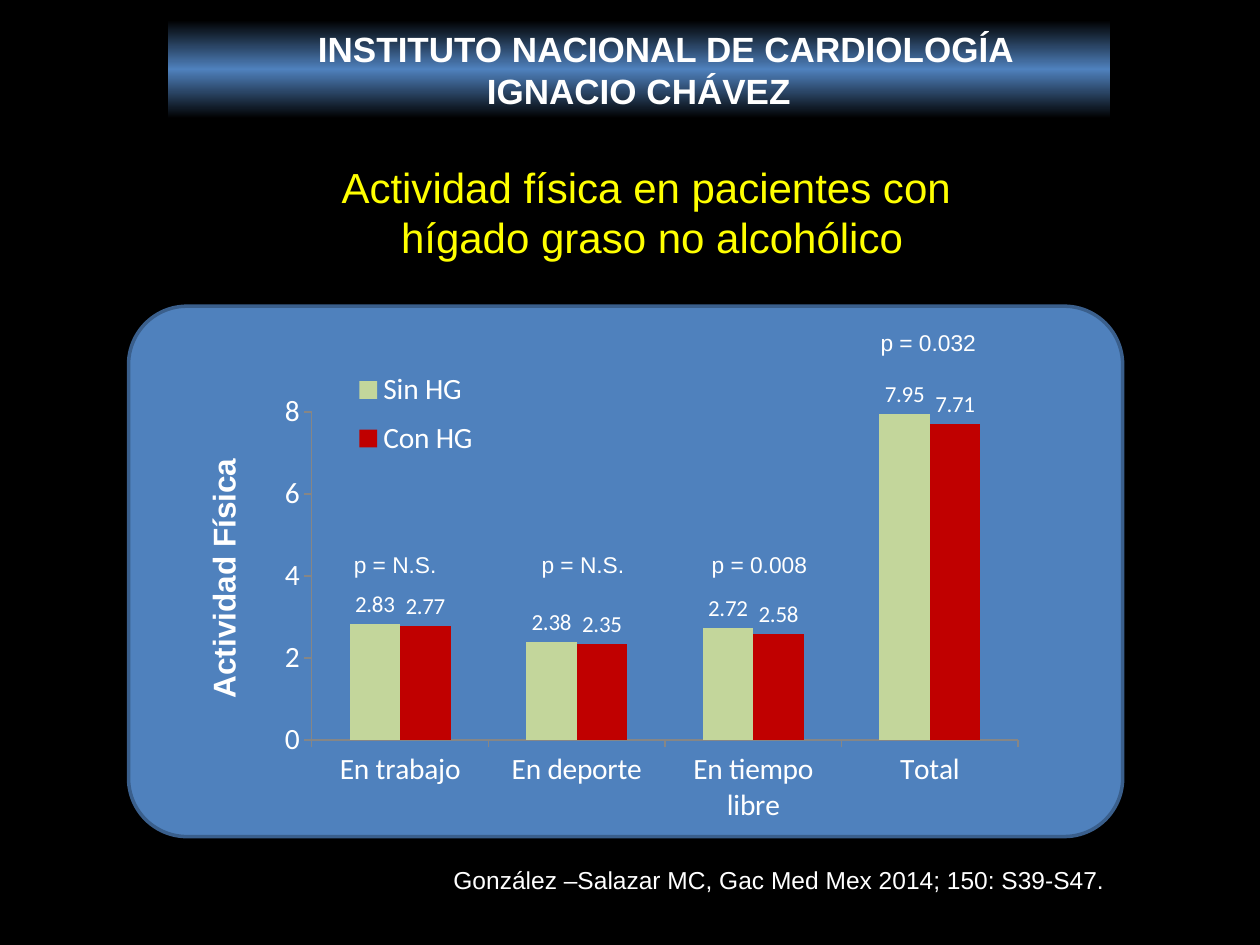
from copy import deepcopy
from lxml import etree
from pptx import Presentation
from pptx.chart.data import CategoryChartData as Data
from pptx.dml.color import RGBColor as RGB
from pptx.enum.chart import XL_CHART_TYPE as Kind, XL_LABEL_POSITION as Spot
from pptx.enum.chart import XL_LEGEND_POSITION as Side, XL_TICK_MARK as Tick
from pptx.enum.shapes import MSO_SHAPE as Shape
from pptx.enum.text import MSO_AUTO_SIZE as Fit, PP_ALIGN as Align
from pptx.oxml.ns import qn
from pptx.util import Inches, Pt

HUES = {"black": "000000", "white": "FFFFFF", "yellow": "FFFF00", "blue": "4F81BD",
        "edge": "3A5F8C", "green": "C3D69B", "red": "C00000", "grey": "868686"}
HEAD = {"size": Pt(20), "bold": True, "name": "Arial"}
TITLE = {"size": Pt(24), "name": "Arial"}
AXIS = {"size": Pt(18), "bold": True, "name": "Arial"}
NOTE = {"size": Pt(13), "name": "Arial"}
CITE = {"size": Pt(14), "name": "Arial"}
TICKS = {"size": Pt(16.8), "name": "Calibri"}
VALUES = {"size": Pt(13.1), "name": "Calibri"}


def hue(name):
    return RGB.from_string(HUES[name])


def paint(fill, name):
    fill.solid()
    fill.fore_color.rgb = hue(name)


def style(item, form):
    for key, val in form.items():
        setattr(item, key, val)


def ink(font, form, name="white"):
    style(font, form)
    font.color.rgb = hue(name)


def write(frame, lines, form, name="white", align=Align.LEFT, wrap=False):
    style(frame, {"word_wrap": wrap, "auto_size": Fit.SHAPE_TO_FIT_TEXT})
    for i, line in enumerate(lines):
        para = frame.add_paragraph() if i else frame.paragraphs[0]
        para.alignment = align
        run = para.add_run()
        run.text = line
        ink(run.font, form, name)


def label(slide, box, lines, form, **more):
    shape = slide.shapes.add_textbox(*map(Inches, box))
    write(shape.text_frame, lines, form, **more)
    return shape


def place(node, index, box, inner=False):
    for old in node.findall(qn("c:layout")):
        node.remove(old)
    root = etree.Element(qn("c:layout"))
    node.insert(index, root)
    spot = etree.SubElement(root, qn("c:manualLayout"))
    pairs = [("layoutTarget", "inner")] if inner else []
    pairs += [("xMode", "edge"), ("yMode", "edge"), *zip("xywh", box)]
    for tag, val in pairs:
        etree.SubElement(spot, qn("c:" + tag)).set("val", str(val))


def header(slide, box):
    bar = slide.shapes.add_shape(Shape.RECTANGLE, *map(Inches, box))
    bar.shadow.inherit = False
    bar.line.fill.background()
    bar.fill.gradient()
    bar.fill.gradient_angle = 270
    stops = bar.fill.gradient_stops
    first, last = stops
    first.color.rgb = last.color.rgb = hue("black")
    first.position, last.position = 0, 1
    rows = bar.element.spPr.find(".//" + qn("a:gsLst"))
    rows.insert(1, deepcopy(rows[0]))
    mid = bar.fill.gradient_stops[1]
    mid.position = 0.5
    mid.color.rgb = hue("blue")
    side, edge = Inches(0.11), Inches(0.06)
    style(bar.text_frame, {"margin_left": side, "margin_right": side,
                           "margin_top": edge, "margin_bottom": edge})
    write(bar.text_frame, ["\tINSTITUTO NACIONAL DE CARDIOLOGÍA ", "IGNACIO CHÁVEZ"],
          HEAD, align=Align.CENTER, wrap=True)


def panel(slide, box):
    left, top, wide, high = box
    card = slide.shapes.add_shape(Shape.ROUNDED_RECTANGLE, *map(Inches, box))
    card.adjustments[0] = 0.11
    card.shadow.inherit = False
    paint(card.fill, "blue")
    card.line.color.rgb = hue("edge")
    card.line.width = Pt(2)
    graph(slide, (left + 1.03, top + 0.33, 6.25, 4.6))
    name = label(slide, (left - 0.31, top + 1.95, 2.12, 0.4), ["Actividad Física"], AXIS)
    name.rotation = 270


def graph(slide, box):
    left, top, wide, high = box
    data = Data()
    data.categories = ["En trabajo", "En deporte", "En tiempo libre", "Total"]
    data.add_series("Sin HG", (2.83, 2.38, 2.72, 7.95))
    data.add_series("Con HG", (2.77, 2.35, 2.58, 7.71))
    chart = slide.shapes.add_chart(Kind.COLUMN_CLUSTERED, *map(Inches, box), data).chart
    style(chart, {"has_title": False, "has_legend": True})
    ink(chart.font, TICKS)
    plot = chart.plots[0]
    style(plot, {"gap_width": 150, "overlap": 0, "vary_by_categories": False})
    for row, name in zip(plot.series, ("green", "red")):
        paint(row.format.fill, name)
        tags = row.data_labels
        style(tags, {"show_value": True, "position": Spot.OUTSIDE_END})
        ink(tags.font, VALUES)
    for axis in (chart.category_axis, chart.value_axis):
        style(axis, {"major_tick_mark": Tick.OUTSIDE, "has_major_gridlines": False})
        axis.format.line.color.rgb = hue("grey")
        ink(axis.tick_labels.font, TICKS)
    style(chart.value_axis, {"minimum_scale": 0, "maximum_scale": 8, "major_unit": 2})
    key = chart.legend
    style(key, {"position": Side.RIGHT, "include_in_layout": False})
    ink(key.font, TICKS)
    area = chart.element.find(".//" + qn("c:plotArea"))
    place(area, 0, (0.068, 0.111, 0.897, 0.566), inner=True)
    place(chart.element.find(".//" + qn("c:legend")), 1, (0.09, 0.02, 0.22, 0.19))
    notes = [(0.66, 1.56, "p = N.S."), (2.15, 1.56, "p = N.S."),
             (3.5, 1.56, "p = 0.008"), (4.84, -0.2, "p = 0.032")]
    for x, y, text in notes:
        span = 0.87 if "N" in text else 0.97
        label(slide, (left + x, top + y, span, 0.32), [text], NOTE)


def main():
    deck = Presentation()
    style(deck, {"slide_width": Inches(10), "slide_height": Inches(7.5)})
    slide = deck.slides.add_slide(deck.slide_layouts[6])
    paint(slide.background.fill, "black")
    header(slide, (1.33, 0.16, 7.48, 0.78))
    label(slide, (1.57, 1.23, 7.21, 0.91),
          ["Actividad física en pacientes con ", "hígado graso no alcohólico"],
          TITLE, name="yellow", align=Align.CENTER, wrap=True)
    panel(slide, (1.02, 2.43, 7.89, 4.21))
    label(slide, (3.5, 6.82, 5.41, 0.34),
          ["González –Salazar MC, Gac Med Mex 2014; 150: S39-S47."], CITE)
    deck.save("out.pptx")


if __name__ == "__main__":
    main()
